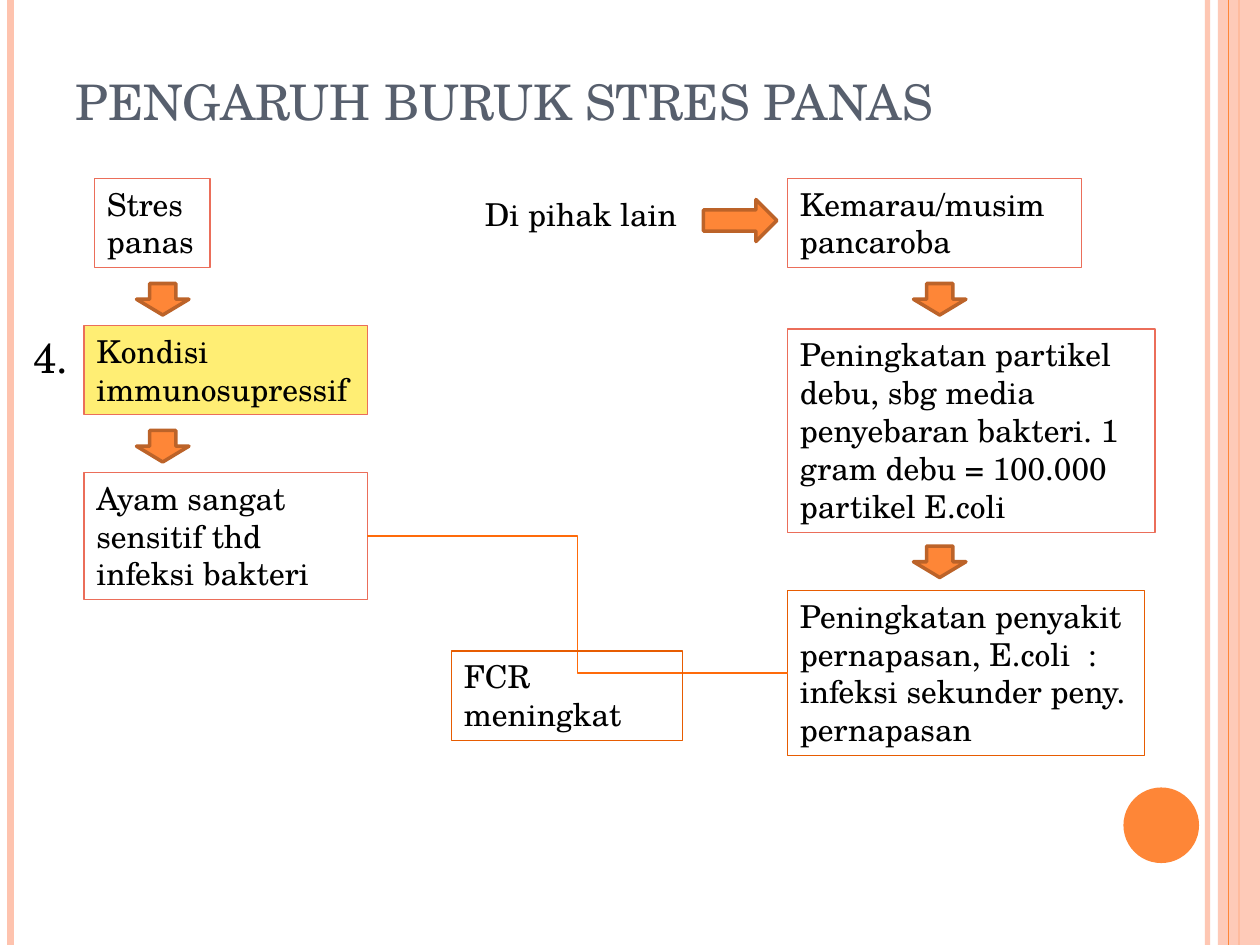
from dataclasses import dataclass

from lxml import etree
from pptx import Presentation, util as u
from pptx.dml.color import RGBColor
from pptx.enum import shapes, text
from pptx.oxml.ns import qn


@dataclass(frozen=True)
class Theme:
    """Colours, type sizes and font of the slide."""
    font: str = "TeX Gyre Schola"
    title: str = "575F6D"
    ink: str = "000000"
    orange: str = "FE8637"
    edge: str = "BC6329"
    peach: str = "FEC3AE"
    coral: str = "EB6E5A"
    rust: str = "E75C01"
    link: str = "FF6B0A"
    yellow: str = "FFEE74"
    title_size: int = 28
    number_size: int = 24
    body_size: int = 18


class Deck:
    """Style and current slide, placed on a 120 by 90 grid."""

    def __init__(self, prs, theme):
        """Set the grid and start a title-only slide."""
        self.theme = theme
        self.col, self.row = prs.slide_width / 120, prs.slide_height / 90
        self.s = prs.slides.add_slide(prs.slide_layouts[5])

    def place(self, x, y, w, h):
        """Turn grid units into slide lengths."""
        return [round(v) for v in (x * self.col, y * self.row, w * self.col, h * self.row)]

    def paint(self, fmt, color, alpha=100):
        """Give a fill a solid colour with an opacity in percent."""
        fmt.solid()
        fmt.fore_color.rgb = RGBColor.from_string(color)
        if alpha < 100:
            clr = next(fmt._xPr.iter(qn("a:srgbClr")))
            etree.SubElement(clr, qn("a:alpha"), val=str(alpha * 1000))

    def outline(self, line, color, width, alpha=100):
        """Set a line's colour and width."""
        self.paint(line.fill, color, alpha)
        line.width = u.Pt(width)

    def set_text(self, tf, words, size, color):
        """Put one styled paragraph in a text frame."""
        p = tf.paragraphs[0]
        p.text = words
        p.font.name, p.font.size = self.theme.font, u.Pt(size)
        p.font.color.rgb = RGBColor.from_string(color)

    def title(self, words, *box):
        """Move and format the title placeholder."""
        sp = self.s.shapes.title
        sp.left, sp.top, sp.width, sp.height = self.place(*box)
        tf = sp.text_frame
        tf.vertical_anchor, tf.auto_size = text.MSO_ANCHOR.BOTTOM, text.MSO_AUTO_SIZE.NONE
        self.set_text(tf, words, self.theme.title_size, self.theme.title)
        tf.paragraphs[0].alignment = text.PP_ALIGN.LEFT

    def box(self, words, *box, border=None, fill=None, size=None):
        """Add a text box, with a border and fill on request."""
        sp = self.s.shapes.add_textbox(*self.place(*box))
        tf = sp.text_frame
        tf.word_wrap, tf.auto_size = True, text.MSO_AUTO_SIZE.SHAPE_TO_FIT_TEXT
        self.set_text(tf, words, size or self.theme.body_size, self.theme.ink)
        if border:
            self.outline(sp.line, border, 0.75)
        if fill:
            self.paint(sp.fill, fill)
        return sp

    def shape(self, kind, *box, fill, edge=None, alpha=100):
        """Add a filled preset shape."""
        sp = self.s.shapes.add_shape(kind, *self.place(*box))
        sp.shadow.inherit = False
        self.paint(sp.fill, fill, alpha)
        if edge:
            self.outline(sp.line, edge, 2)
        else:
            sp.line.fill.background()

    def arrow(self, kind, *box):
        """Add an outlined block arrow."""
        self.shape(kind, *box, fill=self.theme.orange, edge=self.theme.edge)

    def connector(self, kind, ends, color, width, alpha=100):
        """Add a connector between two grid points."""
        c = self.s.shapes.add_connector(kind, *self.place(*ends))
        self.outline(c.line, color, width, alpha)
        etree.SubElement(c._element.spPr, qn("a:effectLst"))
        return c

    def stripe(self, x, color, width, alpha=100):
        """Add a full-height vertical line."""
        self.connector(shapes.MSO_CONNECTOR.STRAIGHT, (x, 0, x, 90), color, width, alpha)

    def elbow(self, start, end, color):
        """Join the right side of one box to the left side of another."""
        c = self.connector(shapes.MSO_CONNECTOR.ELBOW, (35, 51, 75, 64), color, 1)
        c.begin_connect(start, 3)
        c.end_connect(end, 1)


def main():
    """Build the heat stress slide."""
    prs = Presentation()
    prs.slide_width, prs.slide_height = u.Inches(10), u.Inches(7.5)
    t = Theme()
    d = Deck(prs, t)
    kind = shapes.MSO_SHAPE

    d.stripe(115, t.peach, 3, 93)
    d.stripe(1, t.peach, 4.5)
    d.stripe(118, t.orange, 1.5)
    d.shape(kind.RECTANGLE, 116, 0, 4, 90, fill=t.peach, alpha=87)
    d.stripe(117, t.orange, 0.75)
    d.shape(kind.OVAL, 107, 75, 7.2, 7.2, fill=t.orange)

    d.title("PENGARUH BURUK STRES PANAS", 6, 3.6, 98, 9.4)

    d.box("Stres panas", 9, 17, 11, 8.5, border=t.coral)
    d.box("Kondisi immunosupressif", 8, 31, 27, 8.5, border=t.coral, fill=t.yellow)
    chicken = d.box("Ayam sangat sensitif thd infeksi bakteri", 8, 45, 27, 12.1, border=t.coral)
    d.box("Kemarau/musim pancaroba", 75, 17, 28, 8.5, border=t.coral)
    d.box("Peningkatan partikel debu, sbg media penyebaran bakteri. "
          "1 gram debu = 100.000 partikel E.coli", 75, 31.35, 35, 19.4, border=t.coral)
    disease = d.box("Peningkatan penyakit pernapasan, E.coli  : "
                    "infeksi sekunder peny. pernapasan", 75, 56.25, 34, 15.7, border=t.rust)

    for x, y in ((13, 27), (13, 41), (87, 27), (87, 52)):
        d.arrow(kind.DOWN_ARROW, x, y, 5, 3)
    d.elbow(chicken, disease, t.link)

    d.box("Di pihak lain", 45, 18, 23, 5)
    d.arrow(kind.RIGHT_ARROW, 67, 19, 7, 4)
    d.box("FCR meningkat", 43, 62, 22, 8.5, border=t.rust)
    d.box("4.", 2, 31, 8, 6, size=t.number_size)

    prs.save("out.pptx")


if __name__ == "__main__":
    main()
